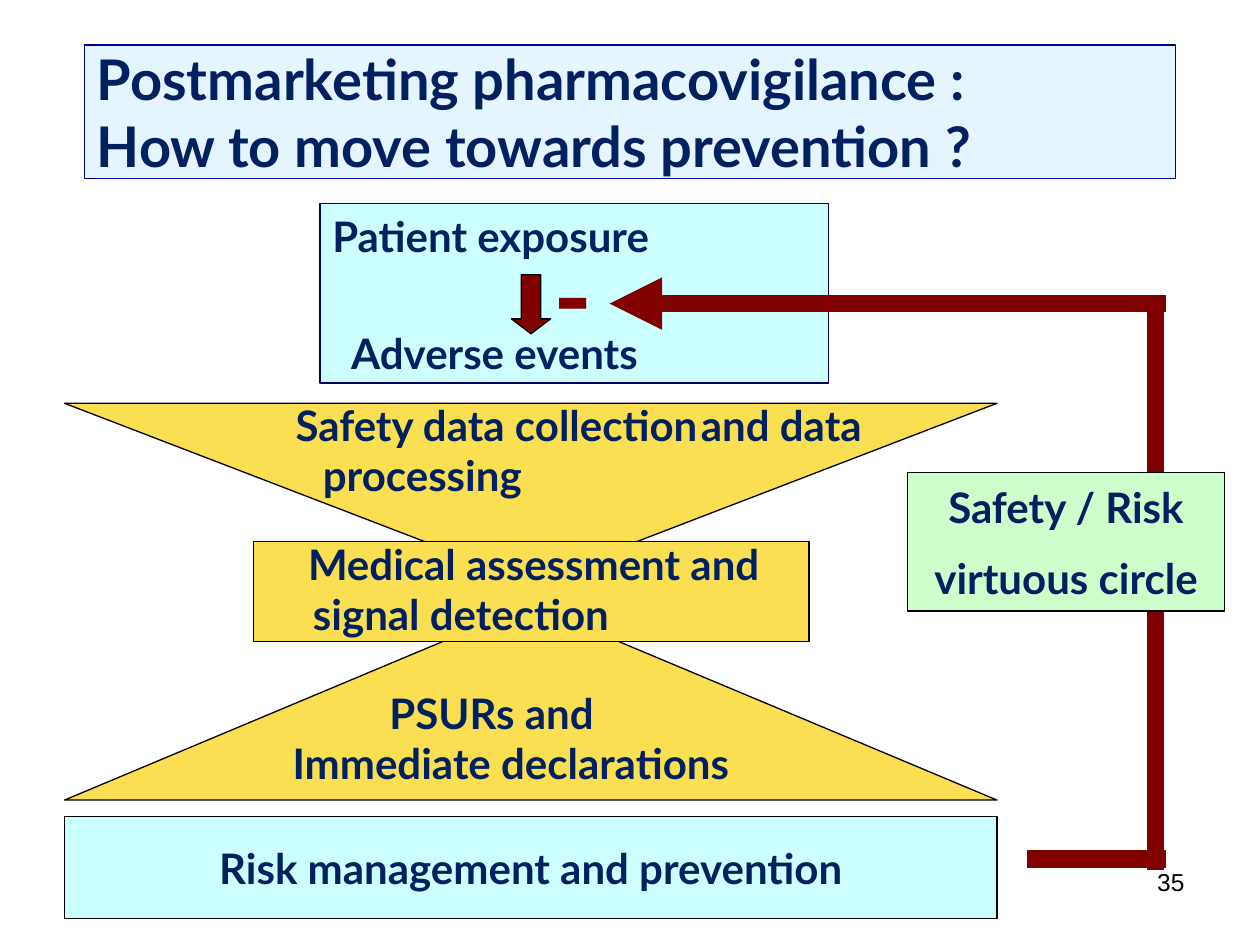
from pptx import Presentation
from pptx.dml.color import RGBColor
from pptx.enum.shapes import MSO_CONNECTOR as Link, MSO_SHAPE as Kind
from pptx.enum.text import MSO_ANCHOR as Anchor, MSO_AUTO_SIZE as Auto, PP_ALIGN as Align
from pptx.oxml.ns import qn
from pptx.util import Cm, Pt
from lxml.etree import SubElement

NAVY = RGBColor(0x00, 0x20, 0x60)
EDGE = RGBColor(0x00, 0x00, 0x99)
DUSK = RGBColor(0x00, 0x00, 0x66)
BLACK = RGBColor(0x00, 0x00, 0x00)
RED = RGBColor(0x80, 0x00, 0x00)
GOLD = RGBColor(0xFB, 0xDF, 0x53)
AQUA = RGBColor(0xCC, 0xFF, 0xFF)
SKY = RGBColor(0xCC, 0xEC, 0xFF)
MINT = RGBColor(0xCC, 0xFF, 0xCC)


def write(frame, text, size=24, font="Lato", color=NAVY, bold=True, align=Align.LEFT,
          anchor=Anchor.TOP, wrap=True, gap=0, left=0, first=0, tab=None):
    frame.auto_size = Auto.NONE
    frame.word_wrap = wrap
    frame.vertical_anchor = anchor
    for side in ("left", "right"):
        setattr(frame, f"margin_{side}", Cm(0.25))
    for side in ("top", "bottom"):
        setattr(frame, f"margin_{side}", Cm(0.13))
    for i, line in enumerate(text.split("\n")):
        para = frame.add_paragraph() if i else frame.paragraphs[0]
        para.text = line
        para.alignment = align
        para.space_before = Pt(gap if i else 0)
        props = para._p.get_or_add_pPr()
        props.set("marL", str(Cm(left)))
        props.set("indent", str(Cm(first)))
        if tab:
            stops = SubElement(props, qn("a:tabLst"))
            SubElement(stops, qn("a:tab"), pos=str(Cm(tab)), algn="l")
        para.font.size = Pt(size)
        para.font.name = font
        para.font.bold = bold
        para.font.color.rgb = color
    return frame


class Board:
    thin = Pt(0.75)
    thick = Pt(10)

    def __init__(self, deck):
        self.slide = deck.slides.add_slide(deck.slide_layouts[5])
        self.shapes = self.slide.shapes

    def paint(self, shape, fill, edge):
        shape.fill.solid()
        shape.fill.fore_color.rgb = fill
        shape.line.color.rgb = edge
        shape.line.width = self.thin

    def title(self, text, x, y, w, h):
        head = self.shapes.title
        head.left, head.top, head.width, head.height = Cm(x), Cm(y), Cm(w), Cm(h)
        self.paint(head, SKY, EDGE)
        tint = head.fill._xPr.find(qn("a:solidFill"))[0]
        SubElement(tint, qn("a:alpha"), val="50000")
        write(head.text_frame, text, size=32, anchor=Anchor.MIDDLE)

    def shape(self, kind, x, y, w, h, fill, edge=BLACK):
        item = self.shapes.add_shape(kind, Cm(x), Cm(y), Cm(w), Cm(h))
        item.shadow.inherit = False
        self.paint(item, fill, edge)
        return item

    def label(self, text, x, y, w, h, **style):
        box = self.shapes.add_textbox(Cm(x), Cm(y), Cm(w), Cm(h))
        write(box.text_frame, text, **style)

    def line(self, start, end, head=False):
        link = self.shapes.add_connector(Link.STRAIGHT, *map(Cm, start + end))
        link.line.color.rgb = RED
        link.line.width = self.thick
        if head:
            SubElement(link.line._get_or_add_ln(), qn("a:tailEnd"), type="triangle")
        SubElement(link._element.spPr, qn("a:effectLst"))


def main():
    deck = Presentation()
    deck.slide_width, deck.slide_height = Cm(25.4), Cm(19.05)
    board = Board(deck)
    mid = dict(align=Align.CENTER, anchor=Anchor.MIDDLE, wrap=False, gap=12)

    board.title("Postmarketing pharmacovigilance :\nHow to move towards prevention ?",
                1.7, 0.91, 22, 2.69)
    board.label("35", 18.21, 17.35, 5.92, 1.32, size=14, font="Arial",
                color=BLACK, bold=False, align=Align.RIGHT)

    board.shape(Kind.FLOWCHART_MERGE, 1.3, 8.13, 18.8, 3.61, GOLD)
    board.shape(Kind.FLOWCHART_EXTRACT, 1.3, 12.19, 18.8, 3.94, GOLD)
    risk = board.shape(Kind.FLOWCHART_PROCESS, 1.3, 16.46, 18.8, 2.06, AQUA)
    write(risk.text_frame, "Risk management and prevention", **mid)
    board.shape(Kind.FLOWCHART_PROCESS, 5.11, 10.92, 11.2, 2.01, GOLD)

    events = board.shape(Kind.RECTANGLE, 6.45, 4.11, 10.26, 3.61, AQUA, DUSK)
    frame = write(events.text_frame, "Patient exposure\nAdverse events", gap=38)
    frame.paragraphs[1]._p.get_or_add_pPr().set("marL", str(Cm(0.38)))

    board.line((20.7, 17.32), (23.5, 17.32))
    board.line((23.29, 17.53), (23.29, 6.12))
    board.line((23.5, 6.12), (12.29, 6.12), head=True)
    board.label("-", 10.9, 4.52, 1.42, 2.79, size=60, color=RED, wrap=False)

    circle = board.shape(Kind.FLOWCHART_PROCESS, 18.29, 9.53, 6.4, 2.79, MINT)
    write(circle.text_frame, "Safety / Risk\nvirtuous circle", **mid)

    board.label("Safety data collection\tand data processing", 5.31, 7.92, 13.26, 1.8,
                left=0.95, first=-0.55, tab=10.13)
    board.label("Medical assessment and signal detection", 5.11, 10.72, 11, 2.59,
                left=0.95, first=-0.1)
    board.label("PSURs and\vImmediate declarations", 4.7, 13.72, 12.45, 1.8,
                left=0.95, first=1.95)

    arrow = board.shape(Kind.DOWN_ARROW, 10.31, 5.54, 0.79, 1.19, RED)
    arrow.adjustments[0], arrow.adjustments[1] = 0.5, 0.38
    deck.save("out.pptx")


if __name__ == "__main__":
    main()
